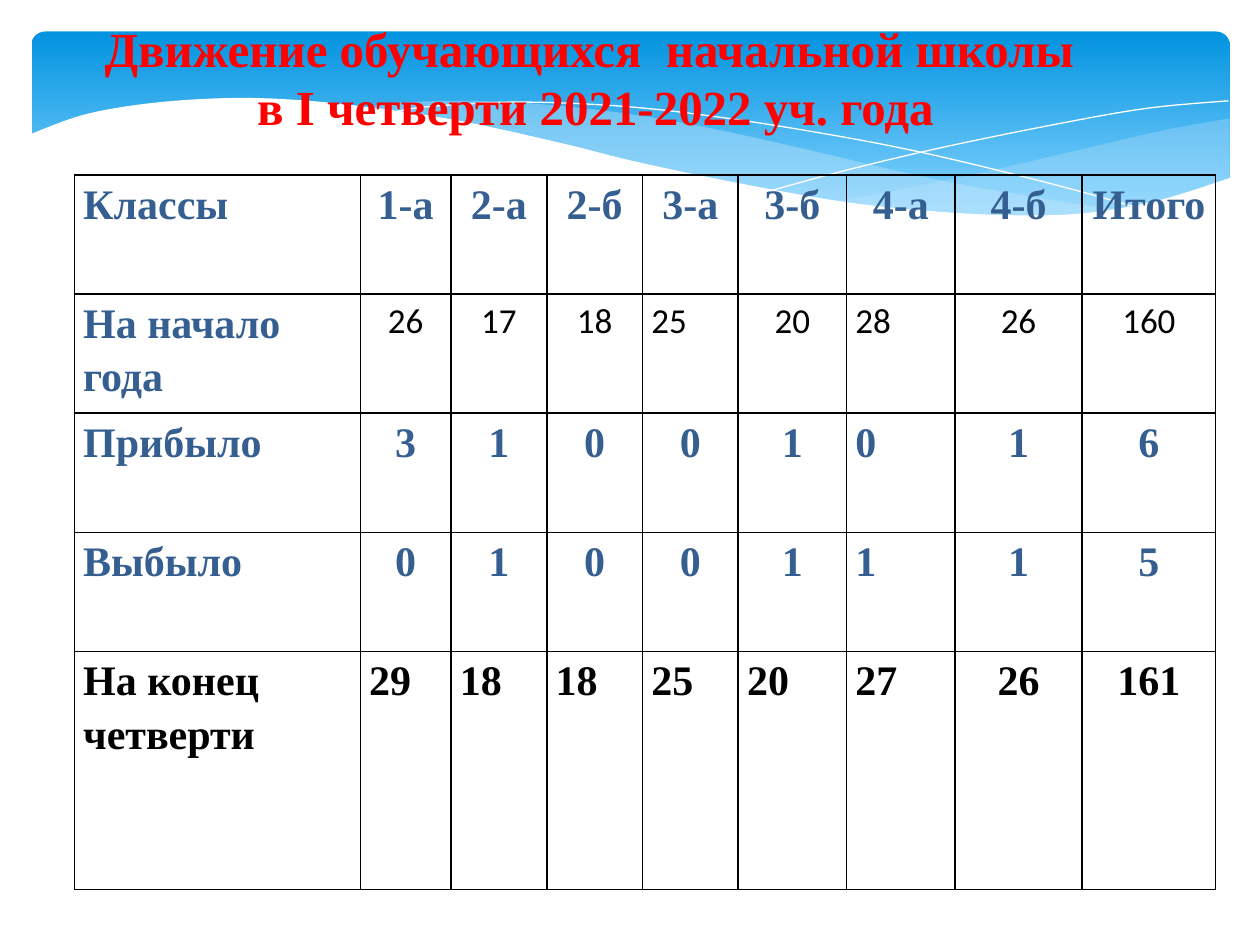
import dataclasses

import lxml.etree
import pptx
import pptx.dml.color
import pptx.enum.dml
import pptx.enum.shapes
import pptx.enum.text
import pptx.oxml.ns
import pptx.util


@dataclasses.dataclass(frozen=True)
class Theme:
    """Colours, fonts and type sizes of the slide."""
    sky_top: str = "0293E0"
    sky_bottom: str = "83D3FE"
    wave: str = "C6E7FC"
    white: str = "FFFFFF"
    black: str = "000000"
    title: str = "FF0000"
    label: str = "365F91"
    serif: str = "Times New Roman"
    sans: str = "Calibri"
    title_size: int = 28
    label_size: int = 24
    count_size: int = 20


@dataclasses.dataclass(frozen=True)
class Box:
    """A region in EMU whose contents are placed by shares of its size."""
    left: float
    top: float
    width: float
    height: float

    def inner(self, left, top, width, height):
        """Return the box that covers the given percentages of this one."""
        return Box(self.left + self.width * left / 100, self.top + self.height * top / 100,
                   self.width * width / 100, self.height * height / 100)

    def frame(self):
        """Return left, top, width and height as whole EMU."""
        return [round(n) for n in (self.left, self.top, self.width, self.height)]


THEME = Theme()
RIGHT_WAVE = (
    [(97.6, 37.6), (92.1, 41.6), (86.1, 47.2), (77.9, 54.8), (70.6, 60.8), (66.1, 64)],
    [(66.1, 64), (71.9, 66.8), (78.1, 68.8), (83.5, 68.8), (88.9, 66.4), (93.5, 62.4), (97.6, 56.4)],
)
LONG_WAVE = (
    [(89.3, 66.8), (83.7, 63.6), (74.1, 56.8), (62.9, 46.4), (55.5, 40), (48.9, 35.6),
     (42, 32.8), (36.1, 32), (31.3, 32.8), (28.6, 34.4)],
    [(28.6, 34.4), (34.2, 37.6), (40.4, 42.4), (44.9, 46.4), (53, 54), (60.1, 60), (66.5, 64.4),
     (73.6, 67.6), (80.7, 69.2), (85.7, 68.4), (89.3, 66.8)],
)
FALLING_LINE = [(30.9, 36), (32.8, 34.4), (36.3, 33.2), (41.6, 32.4), (48.9, 33.6), (55.6, 36.4),
                (63.6, 41.2), (72.7, 48), (83.1, 58), (90.7, 66.4)]
RISING_LINE = [(61.3, 60.4), (67.2, 54), (74.8, 46.8), (83.6, 39.6), (91, 34.4), (97.5, 32)]
PAGE_EDGE = (
    [(97.7, 56.4), (92, 63.6), (86.3, 67.6), (80.9, 68.4), (74.4, 67.2), (66.8, 64), (57.9, 57.6),
     (50.3, 51.2), (44.7, 45.6), (36.5, 38.4), (29.2, 34), (23, 31.6), (17.7, 31.2), (11.9, 32.8),
     (6.7, 36.4), (2.3, 42.8)],
    [(2.3, 89.6), (97.7, 89.6)],
)
TITLE = ["Движение обучающихся  начальной школы ", "в I четверти 2021-2022 уч. года"]
COLUMNS = [2.27, 0.72, 0.76, 0.76, 0.76, 0.86, 0.86, 1.01, 1.06]
LABEL_STYLE = (THEME.serif, THEME.label_size, THEME.label, True)
COUNT_STYLE = (THEME.sans, THEME.count_size, THEME.black, False)
TOTAL_STYLE = (THEME.serif, THEME.label_size, THEME.black, True)
ROWS = [
    (1, LABEL_STYLE, LABEL_STYLE, {0}, ["Классы", "1-а", "2-а", "2-б", "3-а", "3-б", "4-а", "4-б", "Итого"]),
    (1, LABEL_STYLE, COUNT_STYLE, {0, 4, 6}, ["На начало года", 26, 17, 18, 25, 20, 28, 26, 160]),
    (1, LABEL_STYLE, LABEL_STYLE, {0, 6}, ["Прибыло", 3, 1, 0, 0, 1, 0, 1, 6]),
    (1, LABEL_STYLE, LABEL_STYLE, {0, 6}, ["Выбыло", 0, 1, 0, 0, 1, 1, 1, 5]),
    (2, TOTAL_STYLE, TOTAL_STYLE, set(range(7)), ["На конец четверти", 29, 18, 18, 25, 20, 27, 26, 161]),
]


def rgb(color):
    """Turn a hex string into a colour."""
    return pptx.dml.color.RGBColor.from_string(color)


def style_paragraph(paragraph, style, align):
    """Apply a font style and an alignment to a paragraph."""
    paragraph.alignment = align
    for run in paragraph.runs:
        run.font.name, size, color, run.font.bold = style
        run.font.size = pptx.util.Pt(size)
        run.font.color.rgb = rgb(color)


def smooth(knots, steps=6):
    """Sample a Catmull-Rom curve through the knots."""
    ends = [knots[0], *knots, knots[-1]]
    curve = [knots[0]]
    for a, b, c, d in zip(ends, ends[1:], ends[2:], ends[3:]):
        for t in (step / steps for step in range(1, steps + 1)):
            curve.append(tuple(
                q + t / 2 * (r - p + t * (2 * p - 5 * q + 4 * r - s + t * (3 * (q - r) + s - p)))
                for p, q, r, s in zip(a, b, c, d)))
    return curve


def add_curve(slide, box, edges, closed=True):
    """Draw smoothed edges, given in percent of the box, as one outline."""
    points = [(box.left + box.width * x / 100, box.top + box.height * y / 100)
              for edge in edges for x, y in smooth(edge)]
    builder = slide.shapes.build_freeform(*points[0], scale=1.0)
    builder.add_line_segments(points[1:], close=closed)
    curve = builder.convert_to_shape()
    curve.shadow.inherit = False
    return curve


def add_area(slide, box, edges, color, opacity=100):
    """Draw a filled area without an outline."""
    area = add_curve(slide, box, edges)
    area.line.fill.background()
    area.fill.solid()
    area.fill.fore_color.rgb = rgb(color)
    if opacity < 100:
        paint = area.fill._xPr.find(".//" + pptx.oxml.ns.qn("a:srgbClr"))
        lxml.etree.SubElement(paint, pptx.oxml.ns.qn("a:alpha"), val=str(opacity * 1000))


def add_header(slide, box):
    """Draw the sky panel with its waves and the white edge below."""
    panel = slide.shapes.add_shape(pptx.enum.shapes.MSO_SHAPE.ROUNDED_RECTANGLE,
                                   *box.inner(2.5, 10, 95.1, 62.4).frame())
    panel.adjustments[0] = 0.07
    panel.shadow.inherit = False
    panel.line.fill.background()
    panel.fill.gradient()
    panel.fill.gradient_angle = 270
    for stop, color, position in zip(panel.fill.gradient_stops,
                                     (THEME.sky_top, THEME.sky_bottom), (0, 0.9)):
        stop.color.rgb = rgb(color)
        stop.position = position
    add_area(slide, box, RIGHT_WAVE, THEME.wave, 29)
    add_area(slide, box, LONG_WAVE, THEME.wave, 40)
    for knots in (FALLING_LINE, RISING_LINE):
        strand = add_curve(slide, box, [knots], closed=False)
        strand.fill.background()
        strand.line.color.rgb = rgb(THEME.white)
        strand.line.width = 0
    add_area(slide, box, PAGE_EDGE, THEME.white)


def add_title(slide, box):
    """Write the two-line heading."""
    frame = slide.shapes.add_textbox(*box.frame()).text_frame
    frame.text = "\n".join(TITLE)
    frame.word_wrap = False
    frame.auto_size = pptx.enum.text.MSO_AUTO_SIZE.SHAPE_TO_FIT_TEXT
    frame.vertical_anchor = pptx.enum.text.MSO_ANCHOR.MIDDLE
    for paragraph in frame.paragraphs:
        style_paragraph(paragraph, (THEME.serif, THEME.title_size, THEME.title, True),
                        pptx.enum.text.PP_ALIGN.CENTER)


def add_borders(cell):
    """Rule all four sides of a cell."""
    qn = pptx.oxml.ns.qn
    properties = cell._tc.get_or_add_tcPr()
    for index, side in enumerate(("a:lnL", "a:lnR", "a:lnT", "a:lnB")):
        border = lxml.etree.Element(qn(side), w=str(pptx.util.Pt(1)))
        paint = lxml.etree.SubElement(border, qn("a:solidFill"))
        lxml.etree.SubElement(paint, qn("a:srgbClr"), val=THEME.black)
        properties.insert(index, border)


def add_pupil_table(slide, box):
    """Fill the table of pupil numbers by class."""
    align = pptx.enum.text.PP_ALIGN
    table = slide.shapes.add_table(len(ROWS), len(COLUMNS), *box.frame()).table
    table.first_row = table.horz_banding = False
    for column, share in zip(table.columns, COLUMNS):
        column.width = round(box.width * share / sum(COLUMNS))
    units = sum(row[0] for row in ROWS)
    for r, (height, label_style, count_style, left_columns, texts) in enumerate(ROWS):
        table.rows[r].height = round(box.height * height / units)
        for c, text in enumerate(texts):
            cell = table.cell(r, c)
            cell.fill.background()
            cell.margin_left = cell.margin_right = pptx.util.Inches(0.07)
            cell.margin_top = cell.margin_bottom = 0
            cell.text_frame.text = str(text)
            paragraph = cell.text_frame.paragraphs[0]
            paragraph.line_spacing = 1.15
            style_paragraph(paragraph, count_style if c else label_style,
                            align.LEFT if c in left_columns else align.CENTER)
            add_borders(cell)


def main():
    """Build and save the slide."""
    deck = pptx.Presentation()
    deck.slide_width, deck.slide_height = pptx.util.Inches(10), pptx.util.Inches(7.5)
    slide = deck.slides.add_slide(deck.slide_layouts[6])
    page = Box(0, 0, deck.slide_width, deck.slide_height)
    add_header(slide, page.inner(0, 0, 100, 33.33))
    add_title(slide, page.inner(6.9, 1.2, 80.7, 13.87))
    add_pupil_table(slide, page.inner(5.9, 18.53, 90.6, 75.6))
    deck.save("out.pptx")


if __name__ == "__main__":
    main()
